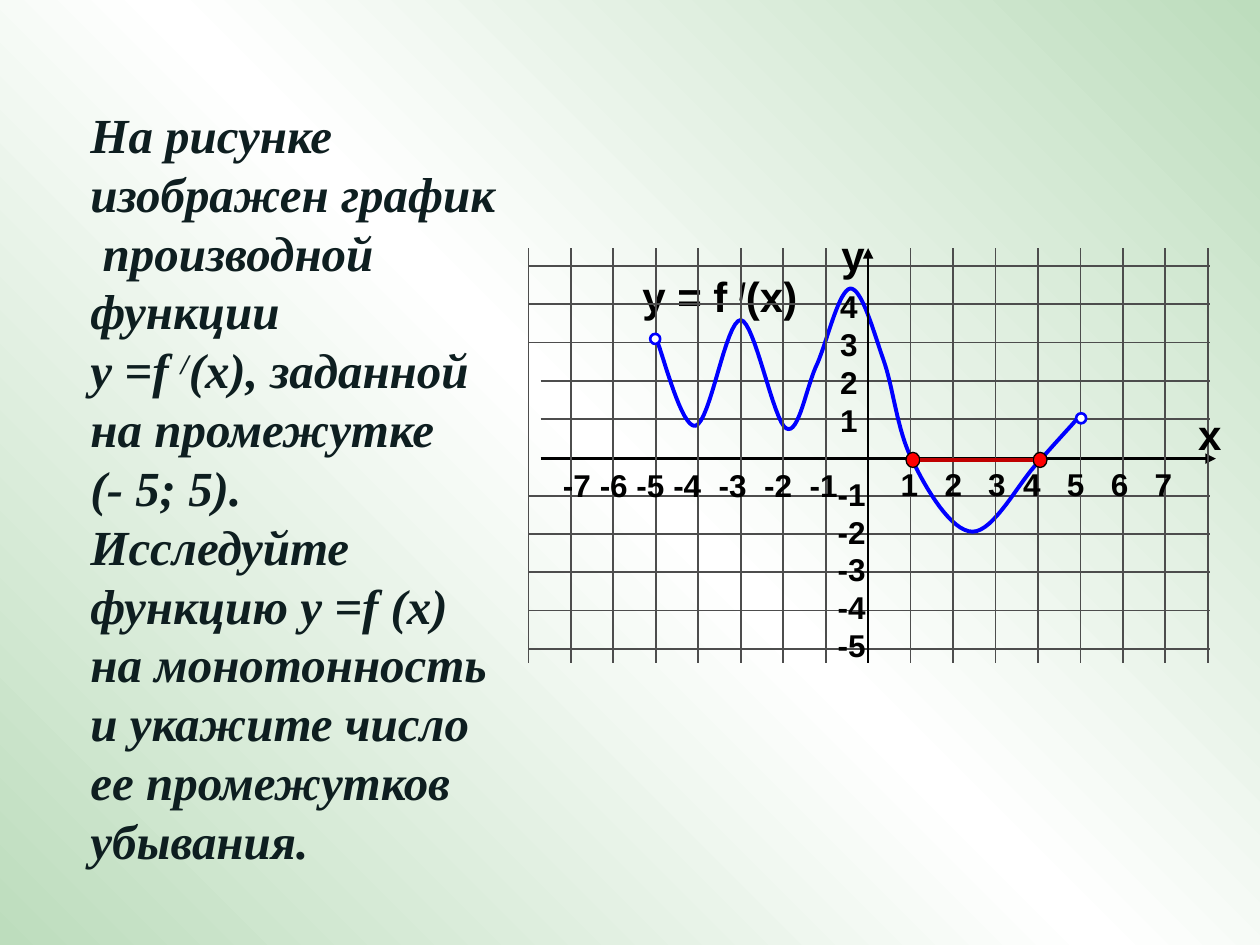
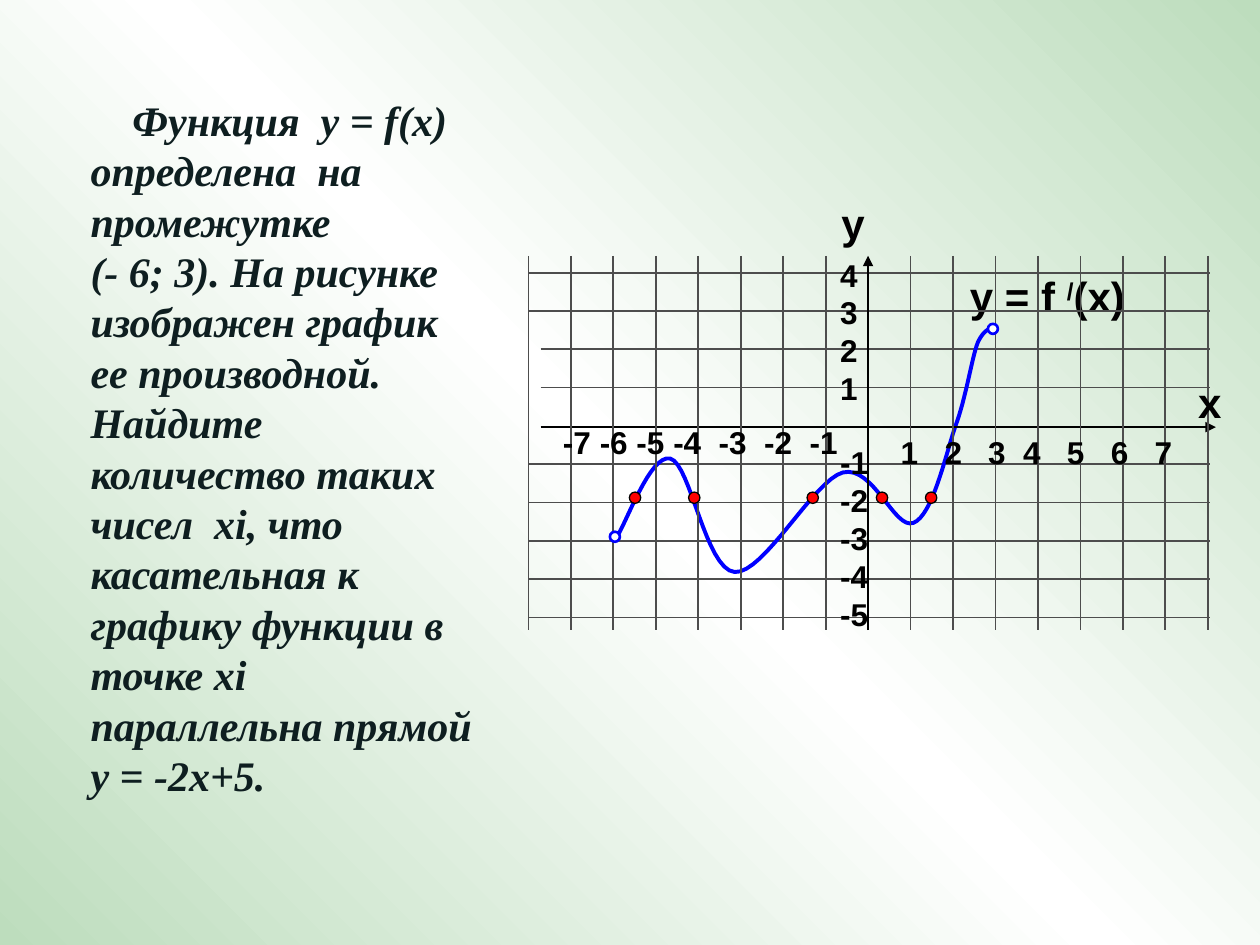
from copy import deepcopy
from dataclasses import dataclass

from lxml import etree
from pptx import Presentation
from pptx import util as u
from pptx.dml.color import RGBColor
from pptx.enum import shapes, text
from pptx.oxml.ns import qn


@dataclass(frozen=True)
class Theme:
    green: str = "BDDDBD"
    white: str = "FFFFFF"
    ink: str = "0E1E20"
    black: str = "000000"
    grid: str = "4D4D4D"
    curve: str = "0000FF"
    dot: str = "FF0000"
    interval: str = "C00000"
    body_font: str = "Times New Roman"
    label_font: str = "Arial"
    letter_size: float = 24
    tick_size: float = 18


@dataclass(frozen=True)
class Style:
    font: str
    size: float
    color: str
    italic: bool = False


@dataclass(frozen=True)
class Frame:
    """Box on the page grid: left, top, width and height."""
    left: float
    top: float
    width: float
    height: float


@dataclass(frozen=True)
class Task:
    body: tuple[str, ...]
    body_frame: Frame
    body_size: float
    indent: float            # first line, in columns
    formula_left: float
    axis: float              # row of the x axis
    rows_above: int
    grid_top: float          # distance above the axis
    grid_bottom: float       # distance below the axis
    negative_x_drop: float
    negative_y_left: float
    curve: tuple[tuple[float, float], ...]   # start, then Bezier triples
    open_ends: tuple[tuple[float, float], ...]
    dots: tuple[tuple[float, float], ...]
    dot_size: tuple[float, float]
    interval: bool = False


THEME = Theme()
LETTER = Style(THEME.label_font, THEME.letter_size, THEME.black)
TICK = Style(THEME.label_font, THEME.tick_size, THEME.black)

# Page grid: 100 columns by 75 rows
WIDTH, HEIGHT = u.Inches(10), u.Inches(7.5)
COLUMNS, ROWS = 100, 75

# Coordinate plane, in page columns and rows
GRID_LEFT, GRID_RIGHT, AXIS_LEFT, AXIS_RIGHT = 42, 96, 42.9, 96.5
Y_AXIS, X_STEP, Y_STEP = 68.9, 3.37, 3.04
UNITS_ACROSS, ROWS_BELOW = 8, 5
POSITIVE_TABS = (3.48, 6.95, 9.73, 13.2, 16.68, 20.15)
NEGATIVE_TABS = (2.92, 5.83, 8.75, 12.36, 15.97, 19.58)

TASKS = (
    Task(
        body=("На рисунке изображен график  производной функции",
              "у =f ^/^(x), заданной на промежутке",
              "(- 5; 5). Исследуйте функцию у =f (x) на монотонность "
              "и укажите число ее промежутков убывания."),
        body_frame=Frame(6.2, 7.8, 34.7, 62.3), body_size=28, indent=0,
        formula_left=50, axis=36.4, rows_above=5,
        grid_top=16.7, grid_bottom=16.2,
        negative_x_drop=0.1, negative_y_left=65.5,
        curve=((85.8, 32.9),
               (85.3, 33.5), (83.8, 35.1), (82.4, 36.7),
               (80.9, 38.2), (78.9, 42.2), (77.2, 42.2),
               (75.5, 42.2), (73.5, 38.8), (72.4, 36.5),
               (71.2, 34.2), (70.9, 30.7), (70.1, 28.5),
               (69.3, 26.2), (68.4, 22.9), (67.5, 22.9),
               (66.6, 23), (65.7, 26.9), (64.9, 28.8),
               (64, 30.6), (63.4, 34.6), (62.4, 34),
               (61.4, 33.5), (59.9, 25.5), (58.8, 25.4),
               (57.6, 25.4), (56.4, 33.5), (55.2, 33.8),
               (54.1, 34), (52.7, 28.4), (52.1, 26.9)),
        open_ends=((52, 26.9), (85.8, 33.2)),
        dots=((72.45, 36.5), (82.55, 36.5)), dot_size=(1.1, 1.2),
        interval=True),
    Task(
        body=("Функция  у = f(x)  определена  на промежутке",
              "(- 6; 3). На рисунке изображен график ее производной. "
              "Найдите  количество таких  чисел  хi, что касательная "
              "к графику функции в точке хi параллельна прямой "
              "у = -2х+5."),
        body_frame=Frame(6.2, 7, 32.8, 57.6), body_size=24, indent=3.33,
        formula_left=76, axis=33.9, rows_above=4,
        grid_top=13.6, grid_bottom=16.1,
        negative_x_drop=-0.8, negative_y_left=65.7,
        curve=((79, 26),
               (78.8, 26.1), (78.2, 25.9), (77.6, 27.2),
               (77.1, 28.5), (76.7, 31.5), (75.8, 33.9),
               (75, 36.3), (74, 40.9), (72.5, 41.5),
               (71, 42.1), (69.3, 36.9), (66.9, 37.5),
               (64.6, 38.1), (60.6, 45.6), (58.3, 45.4),
               (56, 45.2), (54.8, 36.8), (53.2, 36.4),
               (51.6, 36), (49.7, 41.6), (48.8, 42.9)),
        open_ends=((78.8, 26.1), (48.8, 42.6)),
        dots=tuple((x, 39.5) for x in (50.4, 55.1, 64.5, 70, 73.9)),
        dot_size=(0.9, 0.9)),
)


def across(columns: float) -> u.Emu:
    return u.Emu(round(WIDTH * columns / COLUMNS))


def down(rows: float) -> u.Emu:
    return u.Emu(round(HEIGHT * rows / ROWS))


def set_background(deck) -> None:
    """Diagonal green-white-green gradient on the master."""
    master = deck.slide_master
    fill = master.background.fill
    fill.gradient()
    fill.gradient_angle = 45
    for stop, position in zip(fill.gradient_stops, (0, 1)):
        stop.color.rgb = RGBColor.from_string(THEME.green)
        stop.position = position
    stops = master.element.find(".//" + qn("a:gsLst"))
    middle = deepcopy(stops[0])
    middle.set("pos", "50000")
    middle.find(qn("a:srgbClr")).set("val", THEME.white)
    stops.insert(1, middle)


def add_text(page, frame: Frame, lines: tuple[str, ...], style: Style,
             wrap: bool = False, indent: float = 0,
             tabs: tuple[float, ...] = ()) -> None:
    """Text box; the parts between ^ marks are superscript."""
    box = page.shapes.add_textbox(across(frame.left), down(frame.top),
                                  across(frame.width), down(frame.height))
    area = box.text_frame
    area.word_wrap = wrap
    area.auto_size = text.MSO_AUTO_SIZE.SHAPE_TO_FIT_TEXT
    for number, line in enumerate(lines):
        para = area.add_paragraph() if number else area.paragraphs[0]
        properties = para._p.get_or_add_pPr()
        if indent and number == 0:
            properties.set("indent", str(across(indent)))
        if tabs:
            tab_list = etree.SubElement(properties, qn("a:tabLst"))
            for tab in tabs:
                etree.SubElement(tab_list, qn("a:tab"),
                                 pos=str(across(tab)), algn="l")
        for part, piece in enumerate(line.split("^")):
            span = para.add_run()
            span.text = piece
            span.font.name = style.font
            span.font.size = u.Pt(style.size)
            span.font.bold = True
            span.font.italic = style.italic
            span.font.color.rgb = RGBColor.from_string(style.color)
            if part % 2:
                span._r.get_or_add_rPr().set("baseline", "30000")


def add_line(page, start: tuple[float, float], end: tuple[float, float],
             color: str, weight: float, arrow: bool = False) -> None:
    line = page.shapes.add_connector(
        shapes.MSO_CONNECTOR.STRAIGHT, across(start[0]), down(start[1]),
        across(end[0]), down(end[1]))
    line.line.color.rgb = RGBColor.from_string(color)
    line.line.width = u.Pt(weight)
    if arrow:
        etree.SubElement(line.line._get_or_add_ln(), qn("a:tailEnd"),
                         type="triangle")
    etree.SubElement(line._element.spPr, qn("a:effectLst"))


def add_dot(page, center: tuple[float, float], size: tuple[float, float],
            fill: str, outline: str, weight: float) -> None:
    dot = page.shapes.add_shape(
        shapes.MSO_SHAPE.OVAL, across(center[0] - size[0] / 2),
        down(center[1] - size[1] / 2), across(size[0]), down(size[1]))
    dot.shadow.inherit = False
    dot.fill.solid()
    dot.fill.fore_color.rgb = RGBColor.from_string(fill)
    dot.line.color.rgb = RGBColor.from_string(outline)
    dot.line.width = u.Pt(weight)


def bezier_point(controls: tuple, t: float) -> tuple[int, int]:
    weights = ((1 - t) ** 3, 3 * t * (1 - t) ** 2, 3 * t * t * (1 - t), t ** 3)
    x, y = (sum(w * point[i] for w, point in zip(weights, controls))
            for i in (0, 1))
    return across(x), down(y)


def add_curve(page, points: tuple, steps: int = 16) -> None:
    track = [bezier_point(points[i:i + 4], step / steps)
             for i in range(0, len(points) - 1, 3)
             for step in range(1, steps + 1)]
    builder = page.shapes.build_freeform(across(points[0][0]),
                                         down(points[0][1]))
    builder.add_line_segments(track, close=False)
    curve = builder.convert_to_shape()
    curve.shadow.inherit = False
    curve.fill.background()
    curve.line.color.rgb = RGBColor.from_string(THEME.curve)
    curve.line.width = u.Pt(2.25)


def add_plane(page, task: Task) -> None:
    """Grid, derivative curve and axes."""
    for level in range(-ROWS_BELOW, task.rows_above + 1):
        if level:
            row = task.axis - 0.1 - level * Y_STEP
            left = AXIS_LEFT if level in (1, 2) else GRID_LEFT
            add_line(page, (left, row), (GRID_RIGHT, row), THEME.grid, 1)
    add_curve(page, task.curve)
    add_line(page, (AXIS_LEFT, task.axis), (AXIS_RIGHT, task.axis),
             THEME.black, 1.5, arrow=True)
    top, bottom = task.axis - task.grid_top, task.axis + task.grid_bottom
    for unit in range(-UNITS_ACROSS, UNITS_ACROSS + 1):
        if unit:
            column = Y_AXIS + unit * X_STEP
            add_line(page, (column, top), (column, bottom), THEME.grid, 1)
    add_line(page, (Y_AXIS, bottom), (Y_AXIS, top), THEME.black, 1.5,
             arrow=True)


def add_labels(page, task: Task) -> None:
    """Tick numbers and axis letters, placed from the x axis."""
    axis = task.axis
    add_text(page, Frame(70.5, axis, 25, 4),
             ("\t".join(str(n) for n in range(1, 8)),), TICK,
             wrap=True, tabs=POSITIVE_TABS)
    add_text(page, Frame(43.7, axis + task.negative_x_drop, 25, 4),
             ("\t".join(str(n) for n in range(-7, 0)),), TICK,
             wrap=True, tabs=NEGATIVE_TABS)
    add_text(page, Frame(65.7, axis - 14.1, 3.4, 13),
             tuple(str(n) for n in range(4, 0, -1)), TICK)
    add_text(page, Frame(task.negative_y_left, axis + 0.8, 4.2, 16),
             tuple(str(n) for n in range(-1, -6, -1)), TICK)
    add_text(page, Frame(65.8, axis - 18.7, 3.9, 5), ("y",), LETTER)
    add_text(page, Frame(94.1, axis - 4.5, 3.9, 5), ("x",), LETTER)


def add_task(deck, task: Task) -> None:
    page = deck.slides.add_slide(deck.slide_layouts[6])
    body = Style(THEME.body_font, task.body_size, THEME.ink, italic=True)
    add_text(page, task.body_frame, task.body, body, wrap=True,
             indent=task.indent)
    add_text(page, Frame(task.formula_left, 21, 14.4, 5),
             ("y = f ^/^(x)",), LETTER)
    add_plane(page, task)
    add_labels(page, task)
    # Marked points
    for center in task.open_ends:
        add_dot(page, center, (0.8, 0.8), THEME.white, THEME.curve, 1.5)
    for center in task.dots:
        add_dot(page, center, task.dot_size, THEME.dot, THEME.black, 0.75)
    if task.interval:
        (first, row), (last, _) = task.dots
        radius = task.dot_size[0] / 2
        add_line(page, (first + radius, row), (last - radius, row),
                 THEME.interval, 2.5)


def main() -> None:
    deck = Presentation()
    deck.slide_width, deck.slide_height = WIDTH, HEIGHT
    set_background(deck)
    for task in TASKS:
        add_task(deck, task)
    deck.save("out.pptx")


if __name__ == "__main__":
    main()
